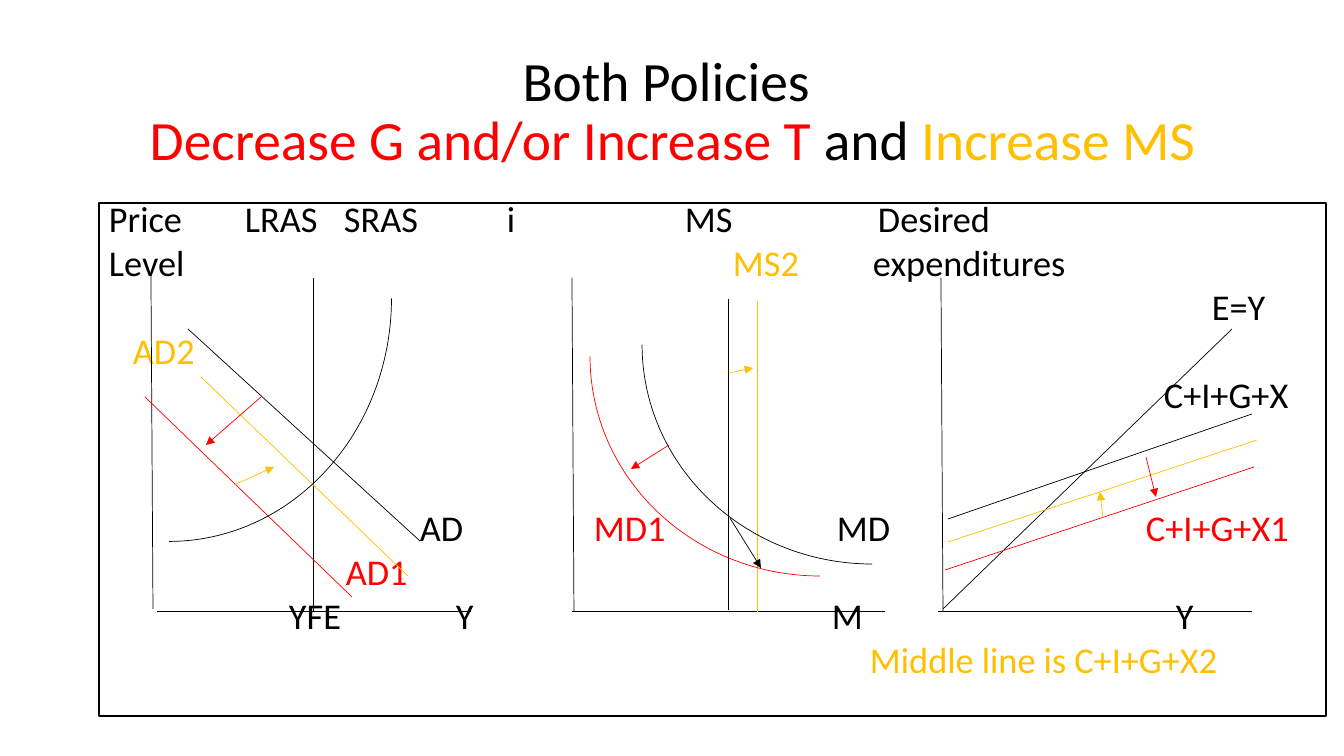
from lxml import etree
from pptx import Presentation
from pptx.dml.color import RGBColor
from pptx.enum.shapes import MSO_CONNECTOR, MSO_SHAPE
from pptx.enum.text import MSO_ANCHOR, MSO_AUTO_SIZE, PP_ALIGN
from pptx.oxml.ns import qn
from pptx.util import Emu, Pt

STRAIGHT = MSO_CONNECTOR.STRAIGHT
RECTANGLE, ARC = MSO_SHAPE.RECTANGLE, MSO_SHAPE.ARC
TOP, MIDDLE = MSO_ANCHOR.TOP, MSO_ANCHOR.MIDDLE
LEFT, CENTER = PP_ALIGN.LEFT, PP_ALIGN.CENTER
NO_AUTOFIT = MSO_AUTO_SIZE.NONE

EMU_PER_PX = 914400 / 100.8
COLORS = {"black": "000000", "red": "FF0000", "gold": "FFC000", "white": "FFFFFF"}
FRAME = (99, 203, 1227, 513)
INSET = 10
LINE_PITCH = 31.8
LINE_GAP = 9.7

TITLE_LINES = [
    [("Both Policies ", "black")],
    [("Decrease G and/or Increase T ", "red"), ("and ", "black"), ("Increase MS", "gold")],
]

# Each row: blank lines above it, then labels as (left px, text, color).
LABEL_ROWS = [
    (0, [(109, "Price", "black"), (245, "LRAS", "black"), (344, "SRAS", "black"),
         (507, "i", "black"), (685, "MS", "black"), (878, "Desired", "black")]),
    (0, [(109, "Level", "black"), (733, "MS2", "gold"), (873, "expenditures", "black")]),
    (0, [(1212, "E=Y", "black")]),
    (0, [(133, "AD2", "gold")]),
    (0, [(1164, "C+I+G+X", "black")]),
    (2, [(420, "AD", "black"), (594, "MD1", "red"), (837, "MD", "black"),
         (1146, "C+I+G+X1", "red")]),
    (0, [(346, "AD1", "red")]),
    (0, [(289, "YFE", "black"), (456, "Y", "black"), (832, "M", "black"),
         (1176, "Y", "black")]),
    (0, [(870, "Middle line is C+I+G+X2", "gold")]),
]

AXES = [
    (151, 276, 153, 609), (157, 611, 471, 611),
    (572, 278, 574, 611), (572, 611, 885, 611),
    (941, 278, 943, 611), (938, 611, 1252, 611),
]

CURVES = [
    ("black", 313, 278, 313, 611),
    ("black", 188, 329, 420, 541),
    ("black", 728, 299, 728, 610),
    ("black", 943, 609, 1232, 329),
    ("black", 948, 519, 1252, 414),
    ("red", 145, 397, 352, 597),
    ("red", 945, 570, 1254, 467),
    ("gold", 201, 377, 408, 576),
    ("gold", 948, 542, 1257, 440),
    ("gold", 757, 301, 757, 612),
]

ARCS = [
    ("black", (-74, 76, 486, 445), 90),
    ("black", (642, 125, 460, 439), 180),
    ("red", (590, 137, 460, 439), 180),
]

SHIFT_ARROWS = [
    ("red", 261, 397, 206, 445),
    ("red", 669, 445, 631, 469),
    ("red", 1146, 457, 1156, 497),
    ("gold", 1103, 518, 1100, 492),
    ("gold", 729, 373, 753, 368),
    ("black", 730, 518, 761, 568),
    ("gold", 234, 485, 274, 467),
]


def px(length):
    """Turn pixels into EMU."""
    return Emu(round(length * EMU_PER_PX))


def rgb(name):
    """Look up a named color."""
    return RGBColor.from_string(COLORS[name])


class DiagramSlide:
    """Draws styled elements on one slide."""

    font_name = "Calibri"
    title_size = Pt(39.6)
    label_size = Pt(25.9)
    curve_width = Pt(0.5)
    frame_width = Pt(1)

    def __init__(self, slide):
        """Keep the slide to draw on."""
        self.slide = slide

    def style_paragraph(self, paragraph, size):
        """Set the shared font of a paragraph."""
        paragraph.font.name = self.font_name
        paragraph.font.size = size

    def add_run(self, paragraph, text, color):
        """Append a colored run."""
        run = paragraph.add_run()
        run.text = text
        run.font.color.rgb = rgb(color)

    def title(self, box, lines):
        """Place the title and fill in its lines."""
        shape = self.slide.shapes.title
        shape.left, shape.top, shape.width, shape.height = map(px, box)
        text_frame = shape.text_frame
        text_frame.auto_size = NO_AUTOFIT
        text_frame.vertical_anchor = MIDDLE
        paragraph = text_frame.paragraphs[0]
        paragraph.alignment = CENTER
        paragraph.line_spacing = 0.9
        self.style_paragraph(paragraph, self.title_size)
        for index, line in enumerate(lines):
            if index:
                paragraph.add_line_break()
            for text, color in line:
                self.add_run(paragraph, text, color)

    def label_frame(self, box, rows):
        """Draw the outlined frame with its rows of tabbed labels."""
        shape = self.slide.shapes.add_shape(RECTANGLE, *map(px, box))
        shape.shadow.inherit = False
        shape.fill.solid()
        shape.fill.fore_color.rgb = rgb("white")
        shape.line.color.rgb = rgb("black")
        shape.line.width = self.frame_width
        text_frame = shape.text_frame
        text_frame.word_wrap = True
        text_frame.vertical_anchor = TOP
        text_frame.margin_left = text_frame.margin_right = px(INSET)
        for index, (blank_lines, labels) in enumerate(rows):
            paragraph = text_frame.add_paragraph() if index else text_frame.paragraphs[0]
            paragraph.alignment = LEFT
            paragraph.line_spacing = 0.7
            paragraph.space_before = Pt(LINE_GAP + blank_lines * LINE_PITCH)
            self.label_row(paragraph, labels, box[0] + INSET)

    def label_row(self, paragraph, labels, text_left):
        """Write labels at tab stops measured from the text edge."""
        stops = etree.SubElement(paragraph._p.get_or_add_pPr(), qn("a:tabLst"))
        self.style_paragraph(paragraph, self.label_size)
        for left, text, color in labels:
            if left > text_left:
                position = str(px(left - text_left))
                etree.SubElement(stops, qn("a:tab"), pos=position, algn="l")
                text = "\t" + text
            self.add_run(paragraph, text, color)

    def line(self, color, *ends, arrow=False):
        """Draw a straight line, with an arrowhead at its end if asked."""
        connector = self.slide.shapes.add_connector(STRAIGHT, *map(px, ends))
        connector.line.color.rgb = rgb(color)
        connector.line.width = self.curve_width
        if arrow:
            outline = connector.line._get_or_add_ln()
            etree.SubElement(outline, qn("a:tailEnd"), type="triangle")
        etree.SubElement(connector._element.spPr, qn("a:effectLst"))

    def arc(self, color, box, rotation):
        """Draw a quarter arc."""
        shape = self.slide.shapes.add_shape(ARC, *map(px, box))
        shape.shadow.inherit = False
        shape.rotation = rotation
        shape.fill.background()
        shape.line.color.rgb = rgb(color)
        shape.line.width = self.curve_width


def main():
    """Build and save the presentation."""
    presentation = Presentation()
    presentation.slide_width, presentation.slide_height = px(1344), px(756)
    title_only = presentation.slide_layouts.get_by_name("Title Only")
    diagram = DiagramSlide(presentation.slides.add_slide(title_only))
    diagram.title((93, 40, 1159, 146), TITLE_LINES)
    diagram.label_frame(FRAME, LABEL_ROWS)
    for axis in AXES:
        diagram.line("black", *axis)
    for curve in CURVES:
        diagram.line(*curve)
    for arc in ARCS:
        diagram.arc(*arc)
    for arrow in SHIFT_ARROWS:
        diagram.line(*arrow, arrow=True)
    presentation.save("out.pptx")


if __name__ == "__main__":
    main()
